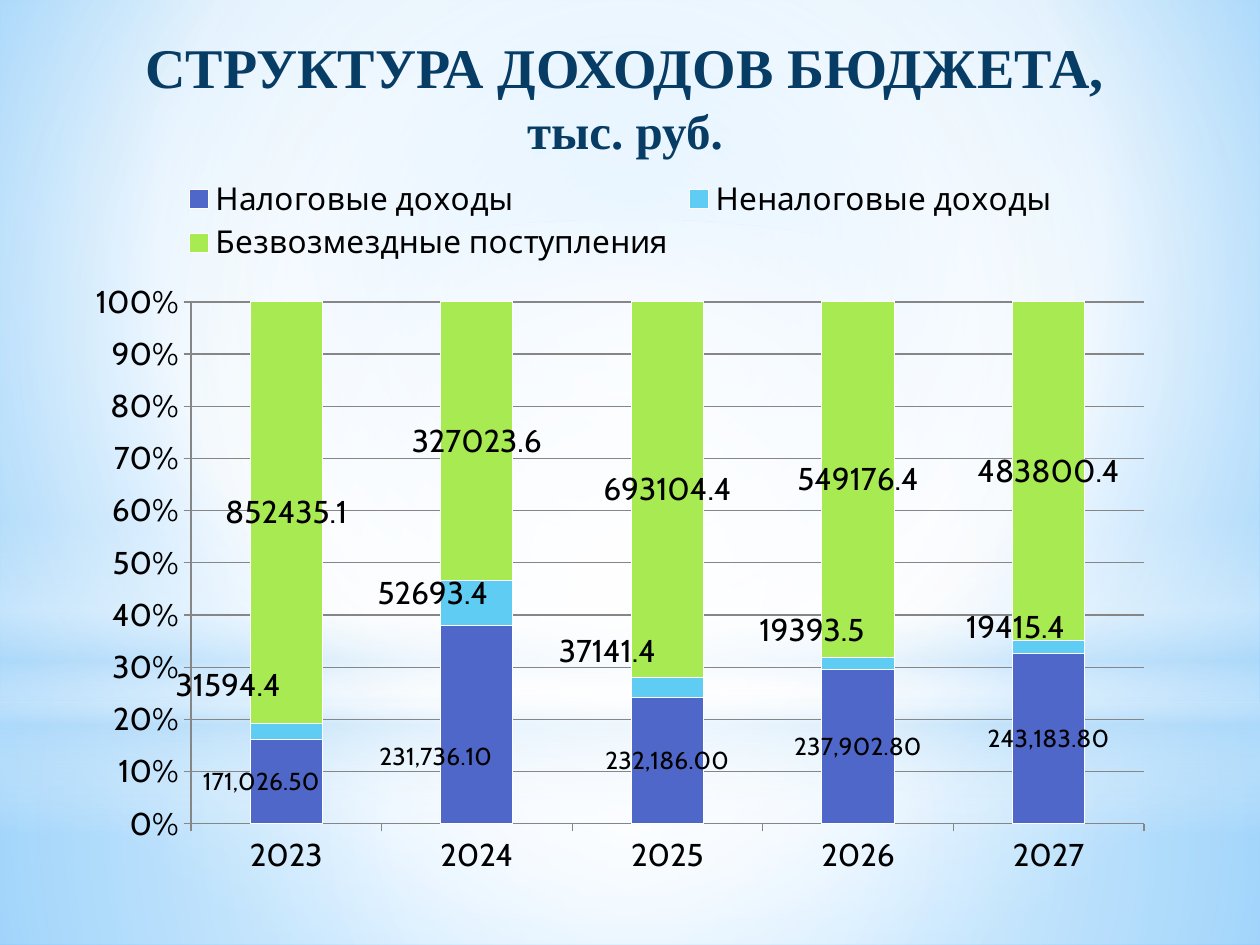
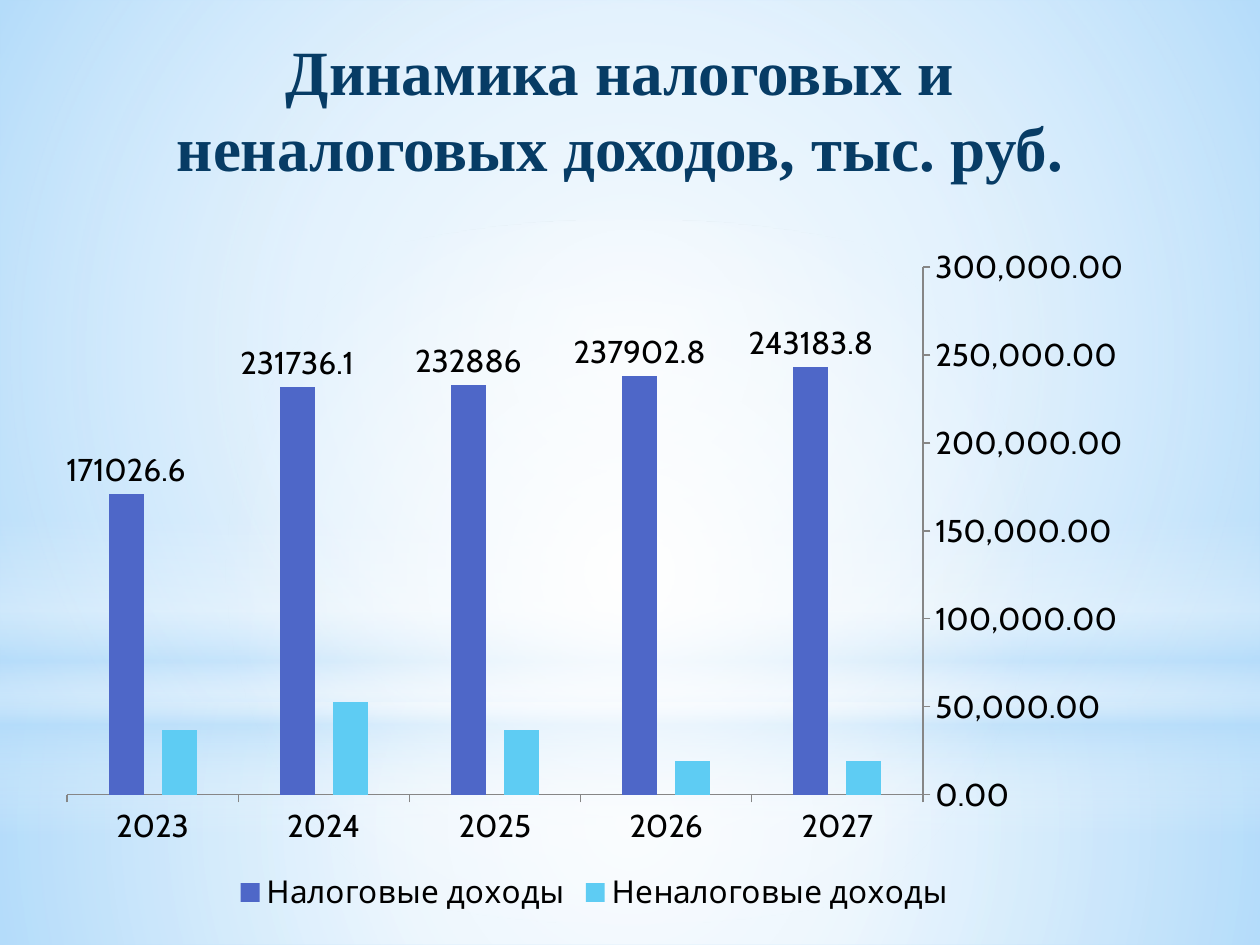
from dataclasses import dataclass
from typing import Optional

from lxml import etree
from pptx import Presentation
from pptx.chart.data import CategoryChartData
from pptx.dml.color import RGBColor
from pptx.enum.chart import XL_AXIS_CROSSES as Crosses
from pptx.enum.chart import XL_CHART_TYPE as ChartType
from pptx.enum.chart import XL_LABEL_POSITION as LabelPosition
from pptx.enum.chart import XL_LEGEND_POSITION as LegendPosition
from pptx.enum.chart import XL_TICK_LABEL_POSITION as TickLabelPosition
from pptx.enum.chart import XL_TICK_MARK as TickMark
from pptx.enum.shapes import MSO_SHAPE as Shape
from pptx.enum.text import MSO_ANCHOR as Anchor
from pptx.enum.text import MSO_AUTO_SIZE as AutoSize
from pptx.enum.text import PP_ALIGN as Align
from pptx.oxml.ns import qn
from pptx.util import Emu, Pt

# Shared look
PX_PER_INCH = 126
WHITE, BLACK, NAVY, GREY = "FFFFFF", "000000", "073C65", "868686"
SKY, BLUE, CYAN, GREEN = "B4DCFA", "4E67C8", "5ECCF3", "A7EA52"
TITLE_FONT, CHART_FONT = "Times New Roman", "Cabin"
CENTRE = (50, 50, 50, 50)
YEARS = ("2023", "2024", "2025", "2026", "2027")
MONEY = "#,##0.00"


@dataclass(frozen=True)
class Box:
    left: int
    top: int
    width: int
    height: int

    def emu(self) -> tuple:
        return tuple(px(n) for n in (self.left, self.top, self.width, self.height))

    def share_of(self, outer: "Box") -> dict:
        return {"x": (self.left - outer.left) / outer.width,
                "y": (self.top - outer.top) / outer.height,
                "w": self.width / outer.width, "h": self.height / outer.height}


@dataclass(frozen=True)
class Gradient:
    stops: tuple  # (position %, colour, opacity %)
    focus: Optional[tuple] = CENTRE  # None gives a vertical linear gradient


@dataclass(frozen=True)
class Glow:
    shape: Shape
    box: Box
    gradient: Gradient


@dataclass(frozen=True)
class Income:
    name: str
    values: tuple
    colour: str
    labelled: bool = True
    label_size: int = 18
    label_format: str = "General"
    shifts: tuple = ()  # label offset in px per year


@dataclass(frozen=True)
class ChartPlan:
    kind: ChartType
    box: Box
    plot: Box
    incomes: tuple
    gap: int
    overlap: int
    legend: LegendPosition
    axis_format: str


SLIDE_GLOW = Gradient(((0, "9ED5FF", 100), (60, WHITE, 100), (100, "5BB9FF", 100)),
                      (20, 10, 20, 60))
GLOWS = (
    Glow(Shape.RECTANGLE, Box(0, 703, 1260, 242),
         Gradient(((0, WHITE, 91), (37, WHITE, 76), (100, SKY, 79)))),
    Glow(Shape.RECTANGLE, Box(0, 0, 1260, 703),
         Gradient(((0, WHITE, 89), (48, WHITE, 62), (100, SKY, 79)))),
    Glow(Shape.RECTANGLE, Box(0, 519, 1260, 315),
         Gradient(((0, WHITE, 0), (29, WHITE, 30), (45, SKY, 40), (55, WHITE, 26),
                   (65, SKY, 60), (100, WHITE, 0)), None)),
    Glow(Shape.OVAL, Box(0, 220, 1260, 703),
         Gradient(((0, WHITE, 100), (56, WHITE, 0)))),
)

STRUCTURE = ChartPlan(
    ChartType.COLUMN_STACKED_100, Box(74, 165, 1091, 724), Box(191, 302, 953, 522),
    (Income("Налоговые доходы", (171026.5, 231736.1, 232186, 237902.8, 243183.8), BLUE,
            label_size=14, label_format=MONEY, shifts=((-25, 0), (-41, 32))),
     Income("Неналоговые доходы", (31594.4, 52693.4, 37141.4, 19393.5, 19415.4), CYAN,
            shifts=((-58, -46), (-44, -10), (-60, -37), (-46, -33), (-33, -20))),
     Income("Безвозмездные поступления",
            (852435.1, 327023.6, 693104.4, 549176.4, 483800.4), GREEN)),
    164, 100, LegendPosition.TOP, "0%")
STRUCTURE_LEGEND = Box(178, 175, 886, 92)

DYNAMICS = ChartPlan(
    ChartType.COLUMN_CLUSTERED, Box(44, 234, 1101, 684), Box(67, 267, 856, 528),
    (Income("Налоговые доходы", (171026.6, 231736.1, 232886, 237902.8, 243183.8), BLUE),
     Income("Неналоговые доходы", (37000, 53000, 37000, 19000, 19000), CYAN,
            labelled=False)),
    238, -52, LegendPosition.BOTTOM, MONEY)


# Helpers
def px(length: int) -> Emu:
    return Emu(round(length * 914400 / PX_PER_INCH))


def rgb(colour: str) -> RGBColor:
    return RGBColor.from_string(colour)


def style_font(font, size: int, name: str = CHART_FONT, colour: str = BLACK,
               bold: bool = False) -> None:
    font.size, font.name, font.bold = Pt(size), name, bold
    font.color.rgb = rgb(colour)


def add_span(para, text: str, **style) -> None:
    span = para.add_run()
    span.text = text
    style_font(span.font, **style)


def apply_gradient(fill, owner, gradient: Gradient) -> None:
    """Swap a plain fill for a gradient."""
    fill.solid()
    plain = next(owner.iter(qn("a:solidFill")))
    grad = etree.Element(qn("a:gradFill"), rotWithShape="1")
    stops = etree.SubElement(grad, qn("a:gsLst"))
    for position, colour, opacity in gradient.stops:
        stop = etree.SubElement(stops, qn("a:gs"), pos=str(position * 1000))
        tint = etree.SubElement(stop, qn("a:srgbClr"), val=colour)
        etree.SubElement(tint, qn("a:alpha"), val=str(opacity * 1000))
    if gradient.focus:
        route = etree.SubElement(grad, qn("a:path"), {"path": "circle"})
        sides = {side: str(n * 1000) for side, n in zip("ltrb", gradient.focus)}
        etree.SubElement(route, qn("a:fillToRect"), sides)
    else:
        etree.SubElement(grad, qn("a:lin"), ang="5400000", scaled="0")
    plain.getparent().replace(plain, grad)


def set_layout(parent, index: int, place: dict, target: str = "") -> None:
    """Place a chart part by hand, in shares of the chart."""
    for old in parent.findall(qn("c:layout")):
        parent.remove(old)
    layout = etree.Element(qn("c:layout"))
    manual = etree.SubElement(layout, qn("c:manualLayout"))
    if target:
        etree.SubElement(manual, qn("c:layoutTarget"), val=target)
    if "w" in place:
        for mode in ("xMode", "yMode"):
            etree.SubElement(manual, qn(f"c:{mode}"), val="edge")
    for key, value in place.items():
        etree.SubElement(manual, qn(f"c:{key}"), val=f"{value:.4f}")
    parent.insert(index, layout)


# Slide parts
def add_page(deck, title_box: Box, spans: tuple):
    page = deck.slides.add_slide(deck.slide_layouts[5])
    for glow in GLOWS:
        shape = page.shapes.add_shape(glow.shape, *glow.box.emu())
        shape.shadow.inherit = False
        shape.line.fill.background()
        apply_gradient(shape.fill, shape.element.spPr, glow.gradient)
    title = page.shapes.title
    title.left, title.top, title.width, title.height = title_box.emu()
    page.shapes.element.append(title.element)  # bring above the glows
    frame = title.text_frame
    frame.word_wrap, frame.auto_size = True, AutoSize.NONE
    frame.vertical_anchor, frame.margin_top = Anchor.TOP, px(7)
    para = frame.paragraphs[0]
    para.alignment, para.line_spacing = Align.CENTER, 1.0
    for text, size in spans:
        add_span(para, text, size=size, name=TITLE_FONT, colour=NAVY, bold=True)
    return page


def add_labels(series, income: Income, plan: ChartPlan, position) -> None:
    labels = series.data_labels
    labels.show_value, labels.position = True, position
    labels.number_format = income.label_format
    labels.number_format_is_linked = False
    style_font(labels.font, income.label_size)
    for leader in labels._element.findall(qn("c:showLeaderLines")):
        leader.set("val", "0")
    for point, (dx, dy) in enumerate(income.shifts):
        label = series.points[point].data_label
        style_font(label.font, income.label_size)
        label.position = position
        item = next(d for d in labels._element.findall(qn("c:dLbl"))
                    if d.find(qn("c:idx")).get("val") == str(point))
        item.insert(1, etree.Element(qn("c:numFmt"), formatCode=income.label_format,
                                     sourceLinked="0"))
        set_layout(item, 1, {"x": dx / plan.box.width, "y": dy / plan.box.height})


def add_income_chart(page, plan: ChartPlan):
    data = CategoryChartData()
    data.categories = YEARS
    for income in plan.incomes:
        data.add_series(income.name, income.values)
    chart = page.shapes.add_chart(plan.kind, *plan.box.emu(), data).chart
    chart.has_title = False
    style_font(chart.font, 18)
    chart.has_legend = True
    chart.legend.position = plan.legend
    chart.legend.include_in_layout = False
    style_font(chart.legend.font, 18)

    stacked = plan.kind == ChartType.COLUMN_STACKED_100
    plot = chart.plots[0]
    plot.gap_width, plot.overlap, plot.vary_by_categories = plan.gap, plan.overlap, False
    set_layout(plot._element.getparent(), 0, plan.plot.share_of(plan.box), "inner")
    for series, income in zip(plot.series, plan.incomes):
        series.format.fill.solid()
        series.format.fill.fore_color.rgb = rgb(income.colour)
        if stacked:
            series.format.line.color.rgb = rgb(WHITE)
        if income.labelled:
            add_labels(series, income, plan,
                       LabelPosition.CENTER if stacked else LabelPosition.OUTSIDE_END)

    values = chart.value_axis
    values.has_major_gridlines = stacked
    lines = [values.format.line, chart.category_axis.format.line]
    if stacked:
        lines.append(values.major_gridlines.format.line)
    for line in lines:
        line.color.rgb, line.width = rgb(GREY), Pt(0.75)
    for axis in (values, chart.category_axis):
        axis.major_tick_mark, axis.minor_tick_mark = TickMark.OUTSIDE, TickMark.NONE
        style_font(axis.tick_labels.font, 18)
    values.tick_labels.number_format = plan.axis_format
    values.tick_labels.number_format_is_linked = False
    return chart


def move_value_axis_right(chart) -> None:
    values = chart.value_axis
    chart.category_axis.crosses = Crosses.MAXIMUM
    values._element.find(qn("c:axPos")).set("val", "r")
    values._element.find(qn("c:crosses")).set("val", "max")
    values.tick_label_position = TickLabelPosition.HIGH


def build_structure(deck) -> None:
    page = add_page(deck, Box(84, 26, 1082, 228),
                    (("СТРУКТУРА ДОХОДОВ БЮДЖЕТА, ", 32), ("тыс. руб.", 28)))
    apply_gradient(page.background.fill, page.element, SLIDE_GLOW)
    chart = add_income_chart(page, STRUCTURE)
    set_layout(chart.legend._element, 1, STRUCTURE_LEGEND.share_of(STRUCTURE.box))


def build_dynamics(deck) -> None:
    page = add_page(deck, Box(94, 26, 1052, 189),
                    (("Динамика налоговых и неналоговых доходов, тыс. руб.", 36),))
    page.background.fill.solid()
    page.background.fill.fore_color.rgb = rgb(SKY)
    chart = add_income_chart(page, DYNAMICS)
    move_value_axis_right(chart)
    chart.value_axis.minimum_scale, chart.value_axis.maximum_scale = 0, 300000
    chart.value_axis.major_unit = 50000


def main() -> None:
    deck = Presentation()
    deck.slide_width, deck.slide_height = px(1260), px(945)
    build_structure(deck)
    build_dynamics(deck)
    deck.save("out.pptx")


if __name__ == "__main__":
    main()
